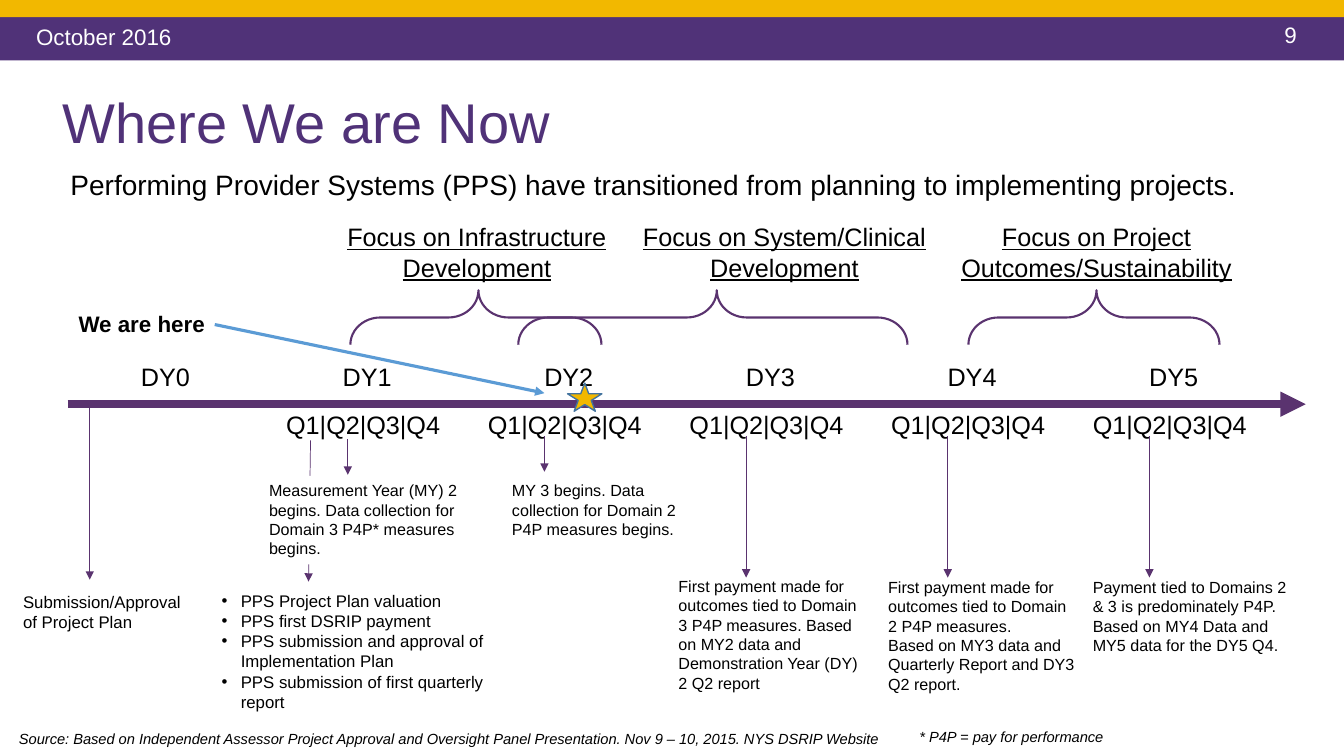
from lxml import etree
from pptx import Presentation
from pptx.dml.color import RGBColor
from pptx.enum.shapes import MSO_CONNECTOR, MSO_SHAPE as SHAPE
from pptx.enum.text import MSO_ANCHOR as ANCHOR, MSO_AUTO_SIZE, PP_ALIGN as ALIGN
from pptx.oxml.ns import qn
from pptx.util import Inches, Pt

PURPLE, GOLD, PLUM, BLACK, WHITE = "503278", "F2B800", "5A336F", "000000", "FFFFFF"
W, H = 13.33, 7.5
YEAR_X, YEAR_W = 1.4, 2.0          # left edge of the DY0 column, column width
years = range(6)
year_x = [YEAR_X + YEAR_W * y for y in years]


def rgb(color):
    return RGBColor.from_string(color)


def write(sp, lines, size, color=BLACK, align=ALIGN.LEFT, bold=None, italic=None, underline=None):
    """Fill a shape with one paragraph per line and format every run."""
    tf = sp.text_frame
    tf.word_wrap = True
    tf.text = lines
    for p in tf.paragraphs:
        p.alignment = align
        for r in p.runs:
            f = r.font
            f.name, f.size, f.color.rgb = "Arial", Pt(size), rgb(color)
            f.bold, f.italic, f.underline = bold, italic, underline
    return tf


prs = Presentation()
prs.slide_width, prs.slide_height = Inches(W), Inches(H)
s = prs.slides.add_slide(prs.slide_layouts[5])
shapes = s.shapes

# Header bands and title
for top, height, color in [(0.17, 0.43, PURPLE), (0, 0.17, GOLD)]:
    band = shapes.add_shape(SHAPE.RECTANGLE, 0, Inches(top), prs.slide_width, Inches(height))
    band.shadow.inherit = False
    band.fill.solid()
    band.fill.fore_color.rgb = rgb(color)
    band.line.fill.background()

title = shapes.title
title.left, title.top, title.width, title.height = map(Inches, (0.52, 0.72, 12.49, 1.04))
tf = write(title, "Where We are Now", 40, PURPLE)
tf.auto_size = MSO_AUTO_SIZE.NONE
tf.vertical_anchor = ANCHOR.MIDDLE
tf.paragraphs[0].line_spacing = 0.9

# Lines and arrows: from, to, width, colour; later shapes cover them
AXIS_Y, STEM_Y, NOTE_Y = 4.01, 4.33, 5.73
arrows = [
    (0.67, AXIS_Y, 12.95, AXIS_Y, 6, PLUM),
    (2.13, 3.22, year_x[2], 3.9, 2.25, "5B9BD5"),
    (0.89, 4.05, 0.89, 5.75, 0.5, PLUM),
    (3.08, 4.37, 3.06, 5.77, 0.5, PLUM),
    (3.45, 4.36, 3.45, 4.71, 0.5, PLUM),
    (year_x[2], STEM_Y, year_x[2], 4.68, 0.5, PLUM),
]
arrows += [(x, STEM_Y, x, NOTE_Y, 0.5, PLUM) for x in year_x[3:]]
for x1, y1, x2, y2, width, color in arrows:
    arrow = shapes.add_connector(MSO_CONNECTOR.STRAIGHT, *map(Inches, (x1, y1, x2, y2)))
    arrow.line.width = Pt(width)
    arrow.line.color.rgb = rgb(color)
    etree.SubElement(arrow.line._get_or_add_ln(), qn("a:tailEnd"), type="triangle")
    etree.SubElement(arrow._element.spPr, qn("a:effectLst"))

# Braces: centre and span, drawn upright and turned a quarter
BRACE_DEPTH, BRACE_Y = 0.54, 3.15
for center, span in [(4.72, 2.49), (7.07, 3.86), (10.85, 2.49)]:
    brace = shapes.add_shape(SHAPE.LEFT_BRACE, Inches(center - BRACE_DEPTH / 2),
                             Inches(BRACE_Y - span / 2), Inches(BRACE_DEPTH), Inches(span))
    brace.rotation = 90
    brace.adjustments[0], brace.adjustments[1] = 0.55, 0.49
    brace.shadow.inherit = False
    brace.fill.background()
    brace.line.color.rgb = rgb(PLUM)
    brace.line.width = Pt(1.5)

# Timeline labels, one tab stop per year
quarters = "Q1|Q2|Q3|Q4"
for left, top, width, labels in [
    (1.3, 3.54, 10.77, "\t".join(f"DY{y}" for y in years)),
    (0.74, AXIS_Y, 12.5, f"\t{quarters}" * 5),
]:
    row = shapes.add_textbox(*map(Inches, (left, top, width, 0.4)))
    p = write(row, labels, 18).paragraphs[0]
    tabs = etree.SubElement(p._p.get_or_add_pPr(), qn("a:tabLst"))
    for y in years[1:]:
        etree.SubElement(tabs, qn("a:tab"), pos=str(Inches(YEAR_W * y)), algn="l")

star = shapes.add_shape(SHAPE.STAR_5_POINT, *map(Inches, (5.63, 3.8, 0.34, 0.28)))
star.shadow.inherit = False
star.fill.solid()
star.fill.fore_color.rgb = rgb(GOLD)
star.line.color.rgb = rgb("43739E")
star.line.width = Pt(1)

# Focus headings above the braces
for left, width, heading in [
    (3.31, 2.84, "Focus on Infrastructure Development"),
    (6.2, 3.16, "Focus on System/Clinical Development"),
    (9.4, 2.95, "Focus on Project Outcomes/Sustainability"),
]:
    box = shapes.add_textbox(*map(Inches, (left, 2.15, width, 0.71)))
    write(box, heading, 18, align=ALIGN.CENTER, underline=True)

# Milestone notes; the two upper ones are white so they hide the arrow behind
for left, top, width, height, size, note, fill in [
    (0.13, 5.82, 1.85, 0.5, 12, "Submission/Approval of Project Plan", None),
    (2.57, 4.72, 2.07, 0.88, 11.5, "Measurement Year (MY) 2 begins. Data collection for "
     "Domain 3 P4P* measures begins.", WHITE),
    (4.98, 4.72, 1.96, 0.71, 11.5, "MY 3 begins. Data collection for Domain 2 P4P measures "
     "begins.", WHITE),
    (6.63, 5.67, 2.02, 1.26, 11.5, "First payment made for outcomes tied to Domain 3 P4P "
     "measures. Based on MY2 data and Demonstration Year (DY) 2 Q2 report", None),
    (8.71, 5.68, 2.08, 1.26, 11.5, "First payment made for outcomes tied to Domain 2 P4P "
     "measures.\nBased on MY3 data and Quarterly Report and DY3 Q2 report.", None),
    (10.74, 5.68, 2.2, 0.91, 11.5, "Payment tied to Domains 2 & 3 is predominately P4P. "
     "Based on MY4 Data and MY5 data for the DY5 Q4.", None),
]:
    box = shapes.add_textbox(*map(Inches, (left, top, width, height)))
    write(box, note, size)
    if fill:
        box.fill.solid()
        box.fill.fore_color.rgb = rgb(fill)

plan = shapes.add_textbox(*map(Inches, (2.1, 5.81, 3.04, 1.31)))
tf = write(plan, "PPS Project Plan valuation\nPPS first DSRIP payment\n"
           "PPS submission and approval of Implementation Plan\n"
           "PPS submission of first quarterly report", 12)
for p in tf.paragraphs:
    pPr = p._p.get_or_add_pPr()
    pPr.set("marL", str(Inches(0.19)))
    pPr.set("indent", str(Inches(-0.19)))
    etree.SubElement(pPr, qn("a:buFont"), typeface="Arial")
    etree.SubElement(pPr, qn("a:buChar"), char="•")

# Subtitle, marker label, footnotes and header text
subtitle = shapes.add_textbox(*map(Inches, (0.35, 1.55, 12.12, 0.5)))
p = write(subtitle, "Performing Provider Systems (PPS) have transitioned from planning to "
          "implementing projects.", 20).paragraphs[0]
p.line_spacing = 1.2
p._p.get_or_add_pPr().set("marL", str(Inches(0.25)))

here = shapes.add_textbox(*map(Inches, (0.43, 3.03, 1.7, 0.37)))
write(here, "We are here", 16, align=ALIGN.RIGHT, bold=True)

for left, top, width, note in [
    (9.02, 7.17, 3.45, "* P4P = pay for performance"),
    (0.09, 7.19, 10.63, "Source: Based on Independent Assessor Project Approval and Oversight "
     "Panel Presentation. Nov 9 – 10, 2015. NYS DSRIP Website"),
]:
    box = shapes.add_textbox(*map(Inches, (left, top, width, 0.28)))
    write(box, note, 10.5, italic=True)

for left, width, height, label in [(0.26, 6, 0.4, "October 2016"), (12.64, 0.48, 0.37, "9")]:
    box = shapes.add_textbox(*map(Inches, (left, 0.16, width, height)))
    write(box, label, 16, WHITE).vertical_anchor = ANCHOR.MIDDLE

prs.save("out.pptx")
